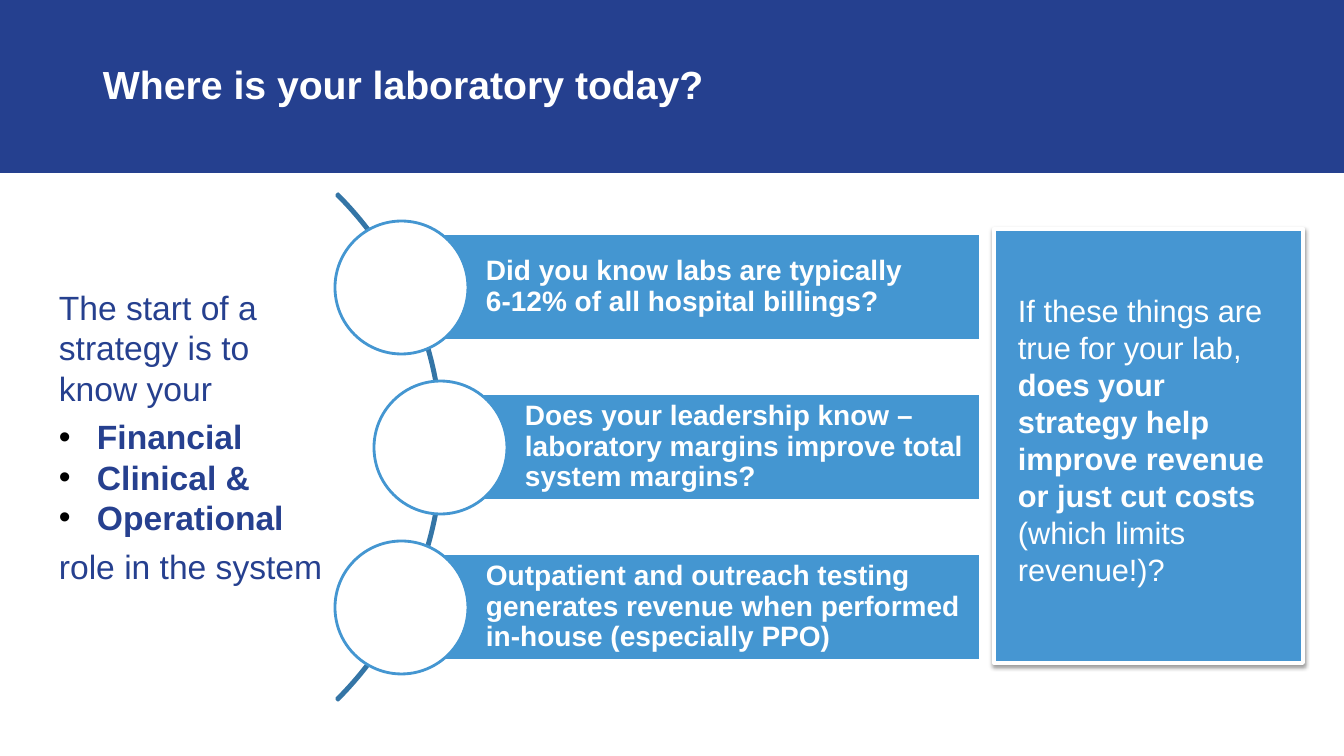
from dataclasses import dataclass

from lxml import etree
from pptx import Presentation
from pptx.dml.color import RGBColor
from pptx.enum.shapes import MSO_SHAPE
from pptx.enum.text import MSO_ANCHOR, MSO_AUTO_SIZE, PP_ALIGN
from pptx.oxml.ns import qn
from pptx.util import Pt

RECT, OVAL, ARC = MSO_SHAPE.RECTANGLE, MSO_SHAPE.OVAL, MSO_SHAPE.BLOCK_ARC
TOP, MIDDLE = MSO_ANCHOR.TOP, MSO_ANCHOR.MIDDLE
LEFT, NO_FIT = PP_ALIGN.LEFT, MSO_AUTO_SIZE.NONE
WIDE, HIGH = 1344, 756
SCALE = 12192000 / WIDE


@dataclass(frozen=True)
class Theme:
    font: str = "Arial"
    navy: str = "25408F"
    ink: str = "26408F"
    blue: str = "4496D1"
    panel: str = "4696D2"
    steel: str = "3475A6"
    white: str = "FFFFFF"
    black: str = "000000"
    title: int = 28
    body: int = 24
    note: int = 22
    label: int = 20


THEME = Theme()


def px(num):
    return round(num * SCALE)


def rgb(code):
    return RGBColor.from_string(code)


def draw(slide, kind, box, fill=None, line=None, width=2):
    shape = slide.shapes.add_shape(kind, *map(px, box))
    shape.shadow.inherit = False
    if fill:
        shape.fill.solid()
        shape.fill.fore_color.rgb = rgb(fill)
    else:
        shape.fill.background()
    if line:
        shape.line.color.rgb = rgb(line)
        shape.line.width = Pt(width)
    else:
        shape.line.fill.background()
    return shape


def frame(shape, pads, anchor):
    """Set the text insets (left, top, right, bottom) and the anchor."""
    text = shape.text_frame
    text.word_wrap = True
    text.auto_size = NO_FIT
    text.vertical_anchor = anchor
    (text.margin_left, text.margin_top,
     text.margin_right, text.margin_bottom) = map(px, pads)
    text.paragraphs[0].alignment = LEFT
    return text


def write(para, words, size, color, bold=False):
    run = para.add_run()
    run.text = words
    font = run.font
    font.name, font.size, font.bold = THEME.font, Pt(size), bold
    font.color.rgb = rgb(color)


def indent(para, left, first=0, bullet=False):
    props = para._p.get_or_add_pPr()
    props.set("marL", str(px(left)))
    props.set("indent", str(px(first)))
    if bullet:
        tint = etree.SubElement(props, qn("a:buClr"))
        etree.SubElement(tint, qn("a:srgbClr"), val=THEME.black)
        etree.SubElement(props, qn("a:buFont"), typeface=THEME.font)
        etree.SubElement(props, qn("a:buChar"), char="•")


def cast(shape):
    """Give the shape a soft shadow straight below it."""
    list_ = shape._element.spPr.find(qn("a:effectLst"))
    outer = etree.SubElement(list_, qn("a:outerShdw"), blurRad=str(Pt(3.1)),
                             dist=str(Pt(1.6)), dir="5400000", rotWithShape="0")
    tint = etree.SubElement(outer, qn("a:srgbClr"), val=THEME.black)
    etree.SubElement(tint, qn("a:alpha"), val="38000")


def header(slide, box, words):
    x, y, w, h = box
    band = draw(slide, RECT, box, THEME.navy)
    slide.shapes._spTree.insert(2, band._element)
    title = slide.shapes.title
    title.left, title.top, title.width, title.height = map(
        px, (x + 93, y + 14, w - 185, h - 27))
    para = frame(title, (10, 5, 10, 5), MIDDLE).paragraphs[0]
    para.line_spacing = 0.9
    write(para, words, THEME.title, THEME.white, True)


def intro(slide, box, rows):
    """Rows are (words, is bullet, space before in points)."""
    area = slide.shapes.add_textbox(*map(px, box))
    text = frame(area, (10, 5, 10, 5), TOP)
    for i, (words, bullet, gap) in enumerate(rows):
        para = text.add_paragraph() if i else text.paragraphs[0]
        if bullet:
            indent(para, 50, -38, True)
        else:
            indent(para, 12)
        if gap:
            para.space_before = Pt(gap)
        write(para, words, THEME.body, THEME.ink, bullet)


def arc(slide, box):
    x, y, w, h = box
    size = 716
    curve = draw(slide, ARC, (x + 102 - size + 6, y + (h - size) // 2, size, size),
                 line=THEME.steel)
    for i, value in enumerate((189, 27, 0.003)):
        curve.adjustments[i] = value


def asks(slide, box, items):
    """Bars stacked along an arc, each with a disc on its left end."""
    x, y, w, h = box
    tall, disc = 106, 133
    step = (h - disc) // (len(items) - 1)
    arc(slide, box)
    for i, (shift, lines) in enumerate(items):
        left, top = x + shift, y + i * step
        start = left + disc // 2
        bar = draw(slide, RECT, (start, top + (disc - tall) // 2,
                                 x + w - start, tall), THEME.blue, THEME.white)
        para = frame(bar, (85, 6, 6, 6), MIDDLE).paragraphs[0]
        para.line_spacing = 0.9
        for n, words in enumerate(lines):
            if n:
                para.add_line_break()
            write(para, words, THEME.label, THEME.white, True)
        draw(slide, OVAL, (left, top, disc, disc), THEME.white, THEME.blue)


def panel(slide, box, runs):
    card = draw(slide, RECT, box, THEME.panel, THEME.white, 3)
    cast(card)
    para = frame(card, (24, 63, 23, 5), TOP).paragraphs[0]
    for words, bold in runs:
        write(para, words, THEME.note, THEME.white, bold)


def main():
    deck = Presentation()
    deck.slide_width, deck.slide_height = px(WIDE), px(HIGH)
    slide = deck.slides.add_slide(deck.slide_layouts[5])
    header(slide, (0, 0, WIDE, 173), "Where is your laboratory today?")
    asks(slide, (335, 221, 645, 453), [
        (0, ["Did you know labs are typically",
             "6-12% of all hospital billings?"]),
        (39, ["Does your leadership know – laboratory margins improve "
              "total system margins?"]),
        (0, ["Outpatient and outreach testing generates revenue when "
             "performed in-house (especially PPO)"]),
    ])
    intro(slide, (37, 282, 304, 346), [
        ("The start of a strategy is to", False, 0),
        ("know your", False, 0),
        ("Financial", True, 6),
        ("Clinical &", True, 0),
        ("Operational", True, 0),
        ("role in the system", False, 6),
    ])
    panel(slide, (994, 229, 309, 434), [
        ("If these things are true for your lab, ", False),
        ("does your strategy help improve revenue or just cut costs", True),
        (" (which limits revenue!)?", False),
    ])
    deck.save("out.pptx")


if __name__ == "__main__":
    main()
